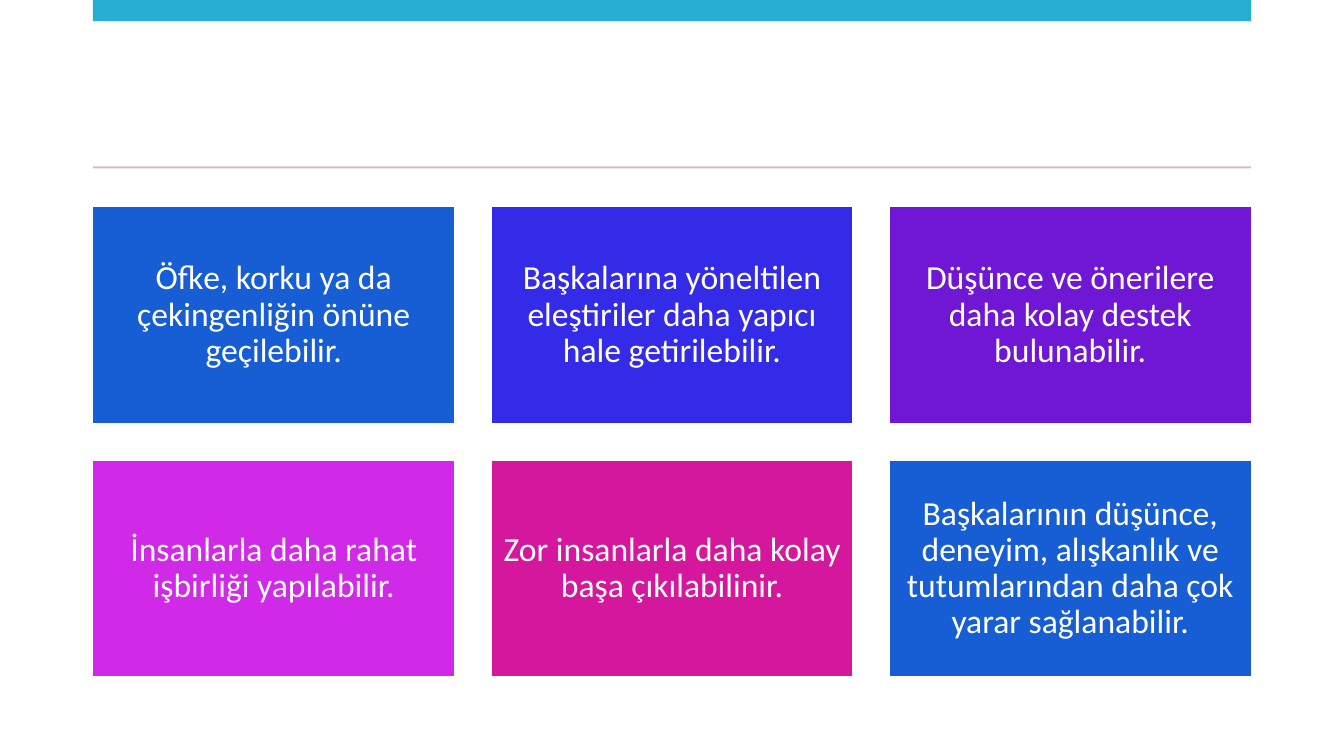
from pptx import Presentation
from pptx.dml.color import RGBColor
from pptx.enum import shapes, text
from pptx.util import Inches, Pt

COLORS = {
    "white": "FFFFFF",
    "teal": "25AED2",
    "rose": "D8BABB",
    "blue": "175ED5",
    "indigo": "332BE7",
    "violet": "6F17D5",
    "magenta": "D029E7",
    "pink": "D5179D",
}
BENEFITS = [
    ("Öfke, korku ya da çekingenliğin önüne geçilebilir.", "blue"),
    ("Başkalarına yöneltilen eleştiriler daha yapıcı hale getirilebilir.", "indigo"),
    ("Düşünce ve önerilere daha kolay destek bulunabilir.", "violet"),
    ("İnsanlarla daha rahat işbirliği yapılabilir.", "magenta"),
    ("Zor insanlarla daha kolay başa çıkılabilinir.", "pink"),
    ("Başkalarının düşünce, deneyim, alışkanlık ve tutumlarından daha çok "
     "yarar sağlanabilir.", "blue"),
]

SLIDE_WIDTH, SLIDE_HEIGHT = 13.33, 7.5
MARGIN = 0.92
CONTENT_WIDTH = SLIDE_WIDTH - 2 * MARGIN
COLUMNS = 3
GAP = 0.36
CARD_WIDTH = (CONTENT_WIDTH - (COLUMNS - 1) * GAP) / COLUMNS
CARD_HEIGHT = 0.6 * CARD_WIDTH
GRID_TOP = 2.05


def color(name):
    return RGBColor.from_string(COLORS[name])


def add_rectangle(slide, left, top, width, height, fill):
    shape = slide.shapes.add_shape(
        shapes.MSO_SHAPE.RECTANGLE,
        Inches(left), Inches(top), Inches(width), Inches(height))
    shape.shadow.inherit = False
    shape.fill.solid()
    shape.fill.fore_color.rgb = color(fill)
    shape.line.fill.background()
    return shape


def add_card(slide, index, wording, fill):
    row, column = divmod(index, COLUMNS)
    card = add_rectangle(
        slide,
        MARGIN + column * (CARD_WIDTH + GAP),
        GRID_TOP + row * (CARD_HEIGHT + GAP),
        CARD_WIDTH, CARD_HEIGHT, fill)
    card.line.color.rgb = color("white")
    card.line.width = Pt(1)

    frame = card.text_frame
    frame.word_wrap = True
    frame.vertical_anchor = text.MSO_ANCHOR.MIDDLE
    frame.margin_left = frame.margin_right = Inches(0.1)
    frame.margin_top = frame.margin_bottom = Inches(0.1)
    paragraph = frame.paragraphs[0]
    paragraph.text = wording
    paragraph.alignment = text.PP_ALIGN.CENTER
    paragraph.line_spacing = 0.9
    paragraph.font.name = "Calibri"
    paragraph.font.size = Pt(24)
    paragraph.font.color.rgb = color("white")


def main():
    presentation = Presentation()
    presentation.slide_width = Inches(SLIDE_WIDTH)
    presentation.slide_height = Inches(SLIDE_HEIGHT)
    slide = presentation.slides.add_slide(presentation.slide_layouts[6])
    slide.background.fill.solid()
    slide.background.fill.fore_color.rgb = color("white")

    add_rectangle(slide, MARGIN, 0, CONTENT_WIDTH, 0.21, "teal")
    add_rectangle(slide, MARGIN, 1.65, CONTENT_WIDTH, 0.02, "rose")
    for index, (wording, fill) in enumerate(BENEFITS):
        add_card(slide, index, wording, fill)

    presentation.save("out.pptx")


if __name__ == "__main__":
    main()
